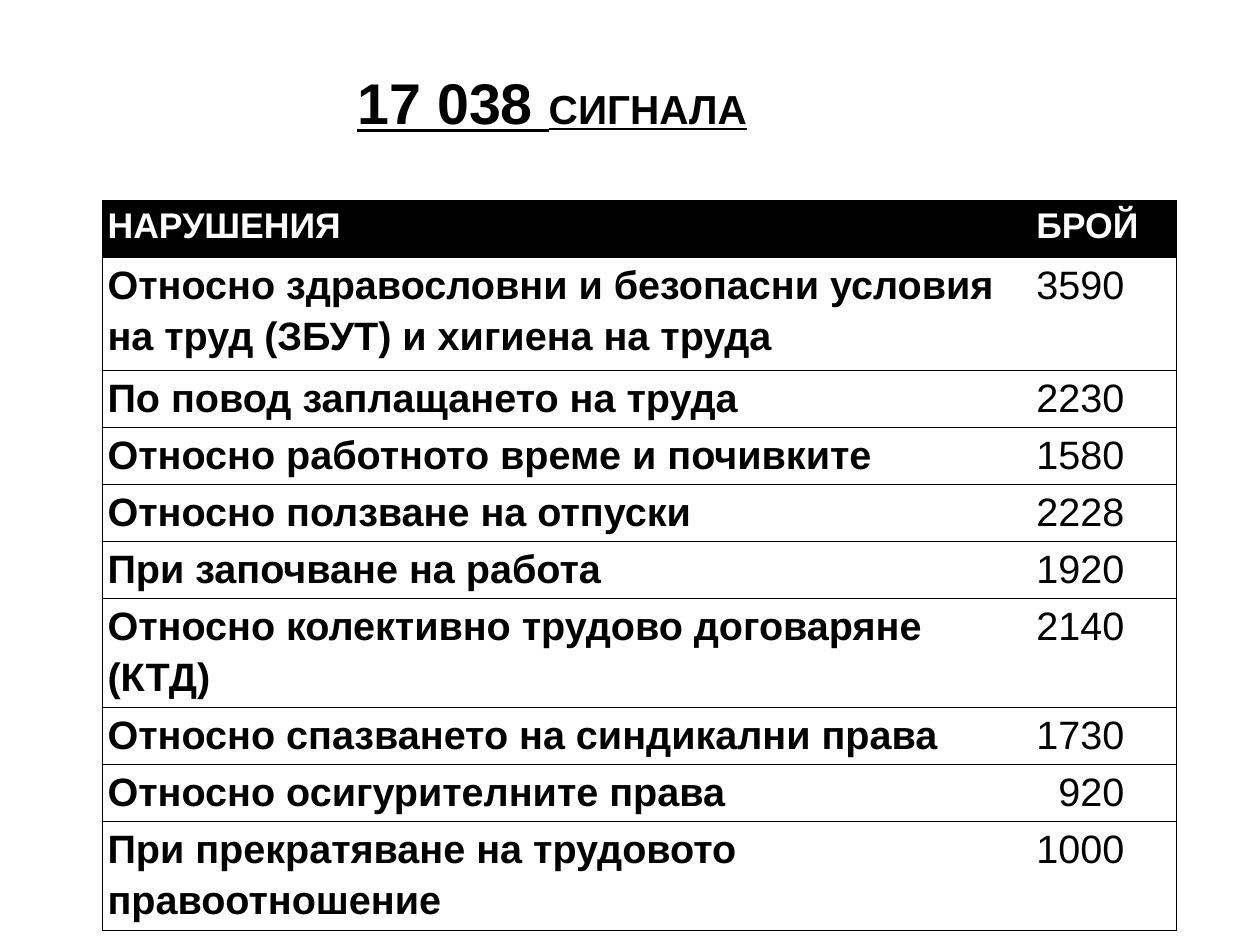
from dataclasses import dataclass

import pptx
import pptx.dml.color
import pptx.enum.text
import pptx.oxml.ns
import pptx.util
from lxml import etree

Inches, Pt = pptx.util.Inches, pptx.util.Pt
qn = pptx.oxml.ns.qn


@dataclass(frozen=True)
class Theme:
    font: str = "Arial"
    ink: str = "000000"
    paper: str = "FFFFFF"
    total_size: int = 58
    word_size: int = 41
    header_size: int = 36
    body_size: int = 40
    rule: float = 0.75
    line_spacing: float = 1.15


THEME = Theme()
HEADER = ("НАРУШЕНИЯ", "БРОЙ")
VIOLATIONS = [
    ("Относно здравословни и безопасни условия на труд (ЗБУТ) и хигиена на труда", "3590"),
    ("По повод заплащането на труда", "2230"),
    ("Относно работното време и почивките", "1580"),
    ("Относно ползване на отпуски", "2228"),
    ("При започване на работа", "1920"),
    ("Относно колективно трудово договаряне (КТД)", "2140"),
    ("Относно спазването на синдикални права", "1730"),
    ("Относно осигурителните права", "920"),
    ("При прекратяване на трудовото правоотношение", "1000"),
]


def rgb(color):
    return pptx.dml.color.RGBColor.from_string(color)


def add_run(p, text, size, color, bold=True, underline=None):
    r = p.add_run()
    r.text = text
    r.font.name = THEME.font
    r.font.size = Pt(size)
    r.font.bold = bold
    r.font.underline = underline
    r.font.color.rgb = rgb(color)


def set_borders(cell, visible):
    """Rule the visible sides (of L, R, T, B) and clear the others."""
    tc_pr = cell._tc.get_or_add_tcPr()
    for side in "LRTB":
        ln = etree.SubElement(tc_pr, qn(f"a:ln{side}"), w=str(Pt(THEME.rule)))
        if side in visible:
            fill = etree.SubElement(ln, qn("a:solidFill"))
            etree.SubElement(fill, qn("a:srgbClr"), val=THEME.ink)
        else:
            etree.SubElement(ln, qn("a:noFill"))


def add_title(slide, left, top, width, height):
    box = slide.shapes.add_textbox(Inches(left), Inches(top), Inches(width), Inches(height))
    tf = box.text_frame
    tf.word_wrap = False
    tf.auto_size = pptx.enum.text.MSO_AUTO_SIZE.SHAPE_TO_FIT_TEXT
    p = tf.paragraphs[0]
    add_run(p, "17 038 ", THEME.total_size, THEME.ink, underline=True)
    add_run(p, "СИГНАЛА", THEME.word_size, THEME.ink, underline=True)


def fill_cell(cell, text, is_header, is_count):
    # Outer frame and horizontal rules only
    set_borders(cell, "RTB" if is_count else "LTB")
    cell.fill.solid()
    cell.fill.fore_color.rgb = rgb(THEME.ink if is_header else THEME.paper)
    cell.margin_left = cell.margin_right = Inches(0.07)
    cell.margin_top = cell.margin_bottom = 0

    p = cell.text_frame.paragraphs[0]
    p.line_spacing = THEME.line_spacing
    if is_header:
        add_run(p, text, THEME.header_size, THEME.paper)
        return
    add_run(p, text, THEME.body_size, THEME.ink, bold=not is_count)
    if is_count:
        # Three-digit counts line up with the four-digit ones
        missing_digits = 4 - len(text)
        p._p.get_or_add_pPr().set("marL", str(Inches(0.31 * missing_digits)))


def add_violations_table(slide, left, top, width, height):
    rows = [HEADER] + VIOLATIONS
    count_width, row_height, first_height = 2.04, 0.8, 1.59
    table = slide.shapes.add_table(len(rows), len(HEADER), Inches(left), Inches(top),
                                   Inches(width), Inches(height)).table
    table.horz_banding = False
    table.columns[0].width = Inches(width - count_width)
    table.columns[1].width = Inches(count_width)
    for i, values in enumerate(rows):
        table.rows[i].height = Inches(first_height if i == 1 else row_height)
        for j, text in enumerate(values):
            fill_cell(table.cell(i, j), text, is_header=i == 0, is_count=j == 1)


def main():
    prs = pptx.Presentation()
    prs.slide_width, prs.slide_height = Inches(17.69), Inches(13.27)
    slide = prs.slides.add_slide(prs.slide_layouts[6])
    add_title(slide, 4.92, 0.89, 5.72, 1.08)
    add_violations_table(slide, 1.44, 2.81, 15.08, 10.23)
    prs.save("out.pptx")


if __name__ == "__main__":
    main()
